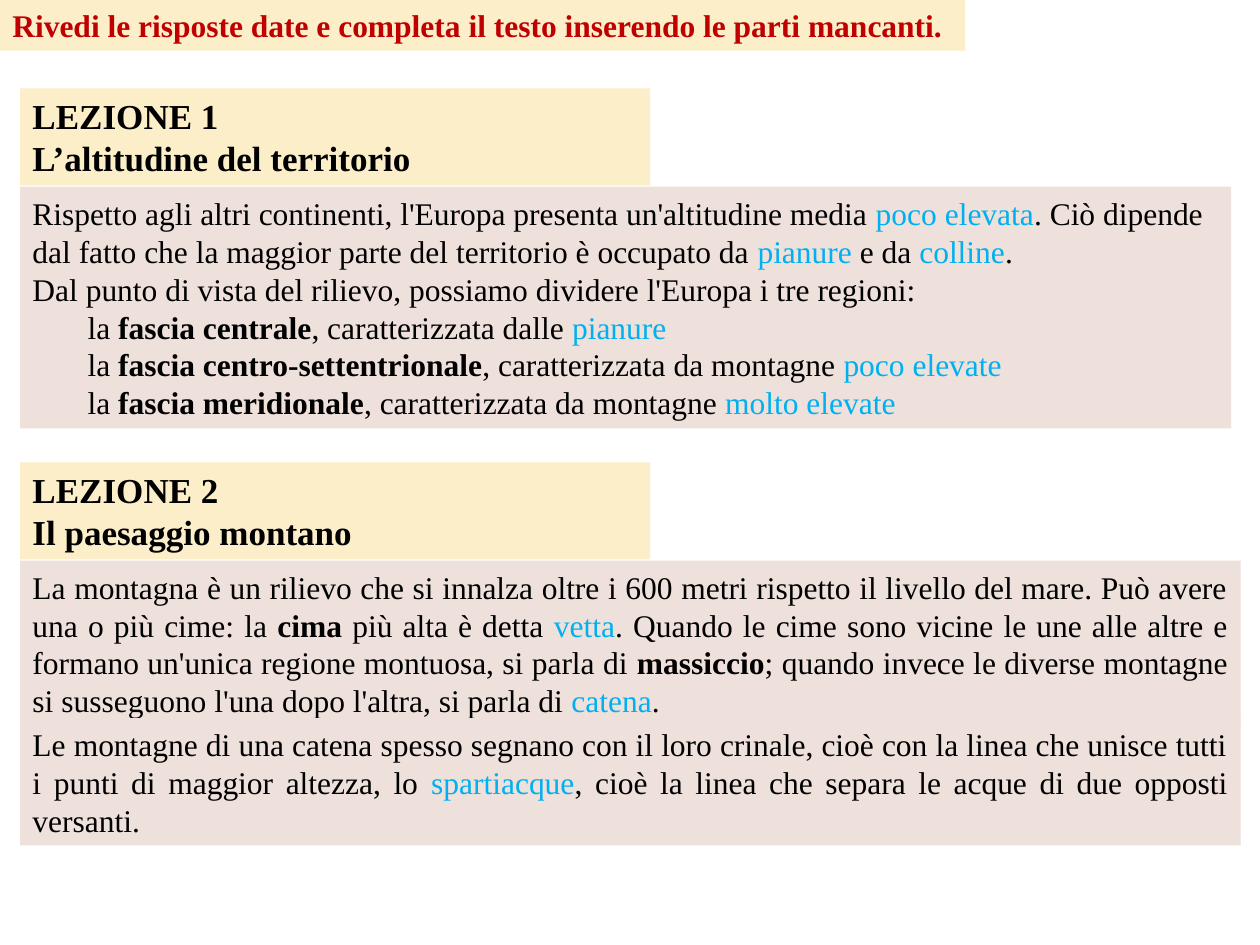
import pptx
import pptx.util
from pptx.dml.color import RGBColor
from pptx.enum.text import MSO_ANCHOR, MSO_AUTO_SIZE, PP_ALIGN

Pt = pptx.util.Pt

CREAM = RGBColor(0xFB, 0xEE, 0xC9)
ROSE = RGBColor(0xEE, 0xE0, 0xDB)
RED = RGBColor(0xC0, 0x00, 0x00)
BLACK = RGBColor(0x00, 0x00, 0x00)
BLUE = RGBColor(0x00, 0xB0, 0xF0)
FONT = "Times New Roman"

LEFT = 11.5
TITLE_WIDTH, TITLE_HEIGHT = 360, 55.5
BODY_OFFSET = 56.2
LIST_INDENT = 31.5

# Run styles: (colour, bold)
PLAIN = (BLACK, False)
TERM = (BLACK, True)
ANSWER = (BLUE, False)
HEADING = (RED, True)

ALTITUDE = [
    [("Rispetto agli altri continenti, l'Europa presenta un'altitudine media ", PLAIN),
     ("poco elevata", ANSWER),
     (". Ciò dipende dal fatto che la maggior parte del territorio è occupato da ", PLAIN),
     ("pianure", ANSWER), (" e da ", PLAIN), ("colline", ANSWER), (".", PLAIN)],
    [("Dal punto di vista del rilievo, possiamo dividere l'Europa i tre regioni:", PLAIN)],
]
REGIONS = [
    [("la ", PLAIN), (region, TERM), (f", caratterizzata {link} ", PLAIN), (answer, ANSWER)]
    for region, link, answer in [
        ("fascia centrale", "dalle", "pianure"),
        ("fascia centro-settentrionale", "da montagne", "poco elevate"),
        ("fascia meridionale", "da montagne", "molto elevate"),
    ]
]
MOUNTAIN = [
    [("La montagna è un rilievo che si innalza oltre i 600 metri rispetto il livello "
      "del mare. Può avere una o più cime: la ", PLAIN),
     ("cima", TERM), (" più alta è detta ", PLAIN), ("vetta", ANSWER),
     (". Quando le cime sono vicine le une alle altre e formano un'unica regione "
      "montuosa, si parla di ", PLAIN),
     ("massiccio", TERM),
     ("; quando invece le diverse montagne si susseguono l'una dopo l'altra, "
      "si parla di ", PLAIN),
     ("catena", ANSWER), (".", PLAIN)],
]
RIDGE = [
    [("Le montagne di una catena spesso segnano con il loro crinale, cioè con la linea "
      "che unisce tutti i punti di maggior altezza, lo ", PLAIN),
     ("spartiacque", ANSWER),
     (", cioè la linea che separa le acque di due opposti versanti.", PLAIN)],
]


def add_panel(page, left, top, width, height, fill, paragraphs, size=18,
              align=PP_ALIGN.LEFT, anchor=MSO_ANCHOR.MIDDLE, wrap=True, listed=()):
    """Filled text box; the paragraphs in listed follow the others, indented."""
    box = page.shapes.add_textbox(Pt(left), Pt(top), Pt(width), Pt(height))
    box.fill.solid()
    box.fill.fore_color.rgb = fill
    frame = box.text_frame
    frame.word_wrap = wrap
    frame.auto_size = MSO_AUTO_SIZE.SHAPE_TO_FIT_TEXT
    frame.vertical_anchor = anchor
    for index, runs in enumerate([*paragraphs, *listed]):
        para = frame.add_paragraph() if index else frame.paragraphs[0]
        para.alignment = align
        if index >= len(paragraphs):
            para._p.get_or_add_pPr().set("marL", str(Pt(LIST_INDENT)))
        for text, (colour, bold) in runs:
            span = para.add_run()
            span.text = text
            span.font.name = FONT
            span.font.size = Pt(size)
            span.font.bold = bold
            span.font.color.rgb = colour


def add_instruction(page, left, top, width, height):
    text = "Rivedi le risposte date e completa il testo inserendo le parti mancanti."
    add_panel(page, left, top, width, height, CREAM, [[(text, HEADING)]], wrap=False)


def add_lesson(page, left, top, width, number, title, bodies, align, listed=()):
    """Lesson title with its body panels; bodies holds (offset, height, paragraphs)."""
    add_panel(page, left, top, TITLE_WIDTH, TITLE_HEIGHT, CREAM,
              [[(f"LEZIONE {number}", TERM)], [(title, TERM)]],
              size=20, align=PP_ALIGN.JUSTIFY, anchor=MSO_ANCHOR.TOP)
    for offset, height, paragraphs in bodies:
        add_panel(page, left, top + offset, width, height, ROSE, paragraphs,
                  align=align, listed=listed)


def main():
    deck = pptx.Presentation()
    deck.slide_width, deck.slide_height = Pt(720), Pt(540)
    page = deck.slides.add_slide(deck.slide_layouts[6])
    add_instruction(page, 0, 0, 551.5, 29)
    add_lesson(page, LEFT, 50.5, 692, 1, "L’altitudine del territorio",
               [(BODY_OFFSET, 138.2, ALTITUDE)], PP_ALIGN.LEFT, REGIONS)
    add_lesson(page, LEFT, 264.2, 697.5, 2, "Il paesaggio montano",
               [(BODY_OFFSET, 94.5, MOUNTAIN), (146.2, 72.7, RIDGE)], PP_ALIGN.JUSTIFY)
    deck.save("out.pptx")


if __name__ == "__main__":
    main()
